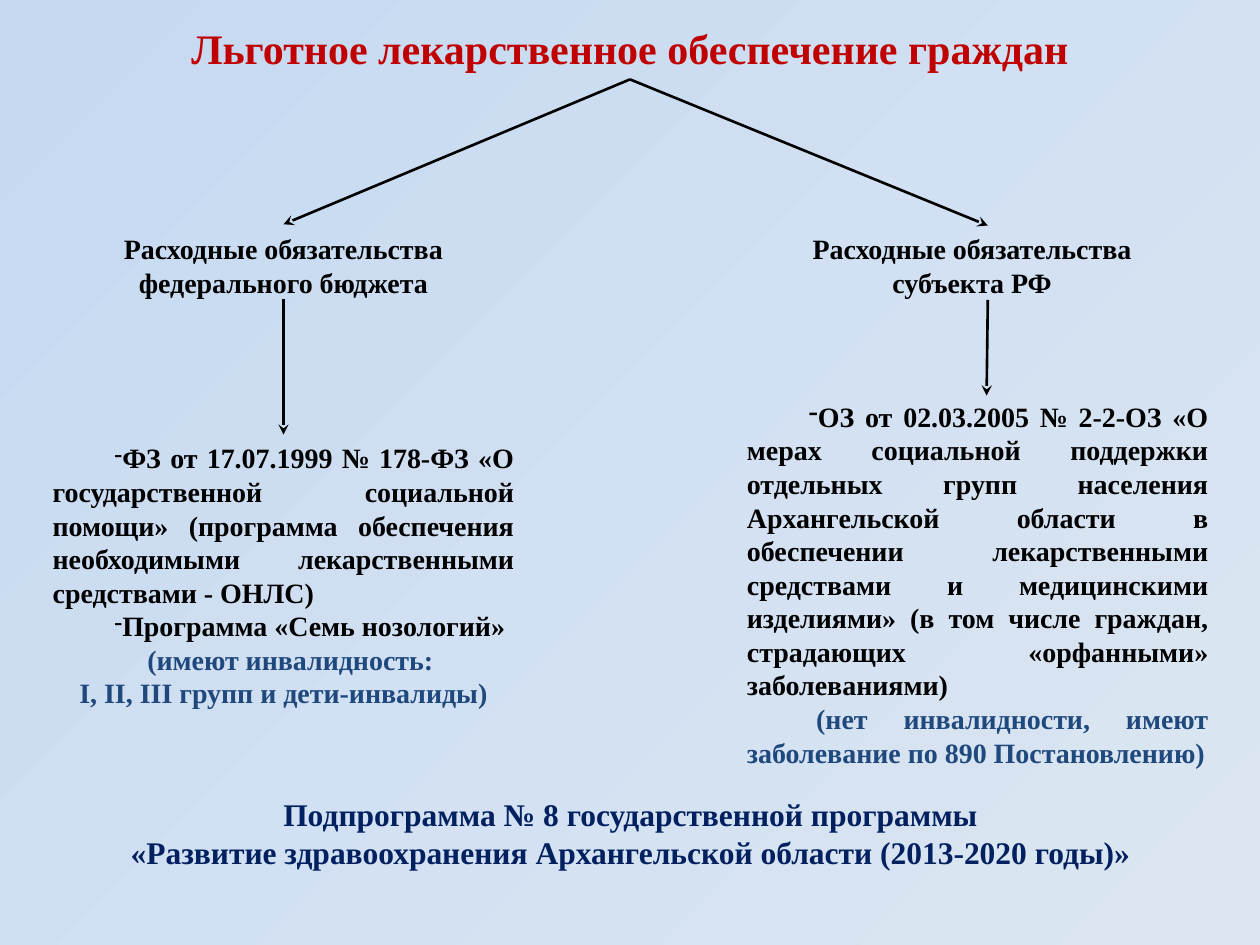
from pptx import Presentation
from pptx.dml.color import RGBColor
from pptx.enum import shapes, text
from pptx.oxml import parse_xml
from pptx.oxml.ns import nsdecls, qn
from pptx.util import Inches, Pt

FONT = "Times New Roman"
RED = RGBColor(0xC0, 0x00, 0x00)
BLACK = RGBColor(0x00, 0x00, 0x00)
BLUE = RGBColor(0x1F, 0x49, 0x7D)
NAVY = RGBColor(0x00, 0x20, 0x60)
CENTER = text.PP_ALIGN.CENTER
JUSTIFY = text.PP_ALIGN.JUSTIFY


def set_background(slide):
    """Fill the slide with a radial gradient centred on its bottom right corner."""
    slide.background.fill.gradient()
    linear = slide.element.find(".//" + qn("a:gradFill"))
    radial = parse_xml(
        f'<a:gradFill {nsdecls("a")} rotWithShape="1"><a:gsLst>'
        '<a:gs pos="0"><a:srgbClr val="DCE6F2"><a:alpha val="60000"/></a:srgbClr></a:gs>'
        '<a:gs pos="100000"><a:srgbClr val="C6D9F1"/></a:gs></a:gsLst>'
        '<a:path path="circle"><a:fillToRect l="100000" t="100000"/></a:path></a:gradFill>')
    linear.getparent().replace(linear, radial)


def add_line(paragraph, words, size, color, align=CENTER):
    """Write one bold run into a paragraph."""
    paragraph.alignment = align
    run = paragraph.add_run()
    run.text = words
    run.font.name = FONT
    run.font.size = Pt(size)
    run.font.bold = True
    run.font.color.rgb = color


def set_indent(paragraph, first=0, left=0, right=0, dash_size=None):
    """Indent a paragraph and, given a percentage, put a dash before it."""
    props = paragraph._p.get_or_add_pPr()
    for name, inches in (("marL", left), ("marR", right), ("indent", first)):
        props.set(name, str(Inches(inches)))
    if dash_size:
        props.append(parse_xml(f'<a:buSzPct {nsdecls("a")} val="{dash_size * 1000}"/>'))
        props.append(parse_xml(f'<a:buFontTx {nsdecls("a")}/>'))
        props.append(parse_xml(f'<a:buChar {nsdecls("a")} char="-"/>'))


def add_block(slide, box, lines):
    """Place a wrapped text box; each line is (words, size, color, align, indents)."""
    frame = slide.shapes.add_textbox(*map(Inches, box)).text_frame
    frame.word_wrap = True
    for index, (words, size, color, align, indents) in enumerate(lines):
        paragraph = frame.add_paragraph() if index else frame.paragraphs[0]
        add_line(paragraph, words, size, color, align)
        if indents:
            set_indent(paragraph, **indents)


def add_title(slide, box, words):
    """Move and format the title placeholder."""
    title = slide.shapes.title
    title.left, title.top, title.width, title.height = map(Inches, box)
    frame = title.text_frame
    frame.auto_size = text.MSO_AUTO_SIZE.NONE
    frame.vertical_anchor = text.MSO_ANCHOR.TOP
    add_line(frame.paragraphs[0], words, 24, RED)


def add_arrow(slide, start, end):
    """Draw a black arrow between two points."""
    arrow = slide.shapes.add_connector(
        shapes.MSO_CONNECTOR.STRAIGHT, *map(Inches, start + end))
    arrow.line.color.rgb = BLACK
    arrow.line.width = Pt(1.5)
    arrow.line._get_or_add_ln().append(
        parse_xml(f'<a:tailEnd {nsdecls("a")} type="stealth"/>'))
    arrow._element.spPr.append(parse_xml(f'<a:effectLst {nsdecls("a")}/>'))


def add_branch(slide, heading_box, heading, law_box, laws, arrows):
    """Place one budget branch: heading, legal basis and the arrows to them."""
    add_block(slide, heading_box,
              [(words, 16, BLACK, CENTER, indents) for words, indents in heading])
    add_block(slide, law_box,
              [(words, 16, color, align, indents) for words, color, align, indents in laws])
    for start, end in arrows:
        add_arrow(slide, start, end)


def add_programme(slide, box, names):
    """Place the programme name at the foot of the slide."""
    add_block(slide, box, [(name, 18, NAVY, CENTER, None) for name in names])


def main():
    """Build and save the slide."""
    deck = Presentation()
    deck.slide_width, deck.slide_height = Inches(10), Inches(7.5)
    slide = deck.slides.add_slide(deck.slide_layouts[5])
    set_background(slide)
    add_title(slide, (0, 0.13, 10, 0.5), "Льготное лекарственное обеспечение граждан")

    fork = (5, 0.63)
    small_dash = dict(first=0.49, dash_size=85)
    add_branch(
        slide, (0.32, 1.79, 3.86, 0.64),
        [("Расходные обязательства", None), ("федерального бюджета", None)],
        (0.32, 3.45, 3.86, 2.25),
        [("ФЗ от 17.07.1999 № 178-ФЗ «О государственной социальной помощи» (программа "
          "обеспечения необходимыми лекарственными средствами - ОНЛС)",
          BLACK, JUSTIFY, small_dash),
         ("Программа «Семь нозологий»", BLACK, JUSTIFY, small_dash),
         ("(имеют инвалидность:", BLUE, CENTER, dict(left=0.11)),
         ("I, II, III групп и дети-инвалиды)", BLUE, CENTER, None)],
        [(fork, (2.25, 1.78)), ((2.25, 2.37), (2.25, 3.45))])
    add_branch(
        slide, (5.84, 1.79, 3.86, 0.64),
        [("Расходные обязательства", dict(right=0.11)), ("субъекта РФ", None)],
        (5.83, 3.12, 3.86, 2.97),
        [("ОЗ от 02.03.2005 № 2-2-ОЗ «О мерах социальной поддержки отдельных групп "
          "населения Архангельской области в обеспечении лекарственными средствами и "
          "медицинскими изделиями» (в том числе граждан, страдающих «орфанными» "
          "заболеваниями)", BLACK, JUSTIFY, dict(first=0.49, dash_size=100)),
         ("(нет инвалидности, имеют заболевание по 890 Постановлению)",
          BLUE, JUSTIFY, dict(first=0.55))],
        [(fork, (7.84, 1.79)), ((7.84, 2.38), (7.83, 3.14))])
    add_programme(slide, (0.32, 6.26, 9.37, 0.67),
                  ["Подпрограмма № 8 государственной программы",
                   "«Развитие здравоохранения Архангельской области (2013-2020 годы)»"])
    deck.save("out.pptx")


if __name__ == "__main__":
    main()
